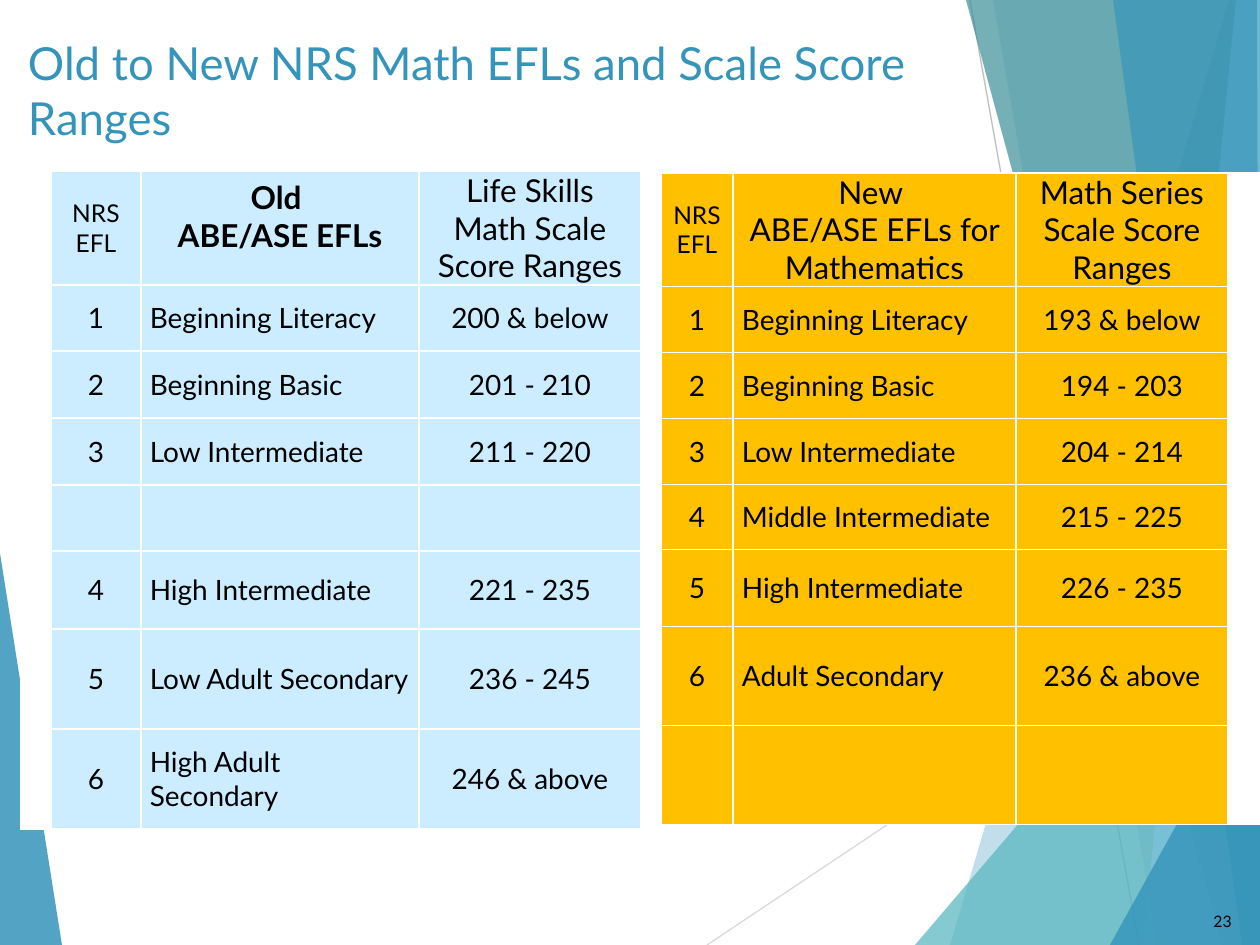
from dataclasses import dataclass

from lxml.etree import SubElement
from pptx import Presentation
from pptx.dml.color import RGBColor
from pptx.enum.shapes import MSO_CONNECTOR
from pptx.enum.text import MSO_ANCHOR as Anchor, PP_ALIGN as Align
from pptx.oxml.ns import qn
from pptx.util import Emu, Pt


@dataclass(frozen=True)
class Theme:
    font: str = "Lato"
    blue: str = "3494BA"
    teal: str = "58B6C0"
    dark_teal: str = "3A8F98"
    pale_blue: str = "7FC1DB"
    light_grey: str = "D9D9D9"
    grey: str = "BFBFBF"
    black: str = "000000"
    white: str = "FFFFFF"
    old_fill: str = "CCECFF"
    new_fill: str = "FFC000"
    title_size: int = 26
    header_size: int = 18
    body_size: int = 16
    label_size: int = 14
    number_size: int = 9


THEME = Theme()
SCALE = 914400 / 126  # EMU in one px
WIDTH, HEIGHT = 1260, 945
CELL_INSET = 9

TITLE = "Old to New NRS Math EFLs and Scale Score Ranges"
SLIDE_NUMBER = "23"

# Background: lines as (start, end, colour), facets as (points, colour, opacity %)
LINES = [
    ((707, 945), (1260, 576), THEME.light_grey),
    ((970, 0), (1139, 945), THEME.grey),
]
FACETS = [
    ([(0, 553), (62, 945), (0, 945)], THEME.blue, 85),
    ([(1229, 0), (950, 945), (1260, 945), (1260, 0)], THEME.blue, 30),
    ([(993, 0), (1158, 945), (1260, 945), (1260, 0)], THEME.blue, 20),
    ([(915, 945), (1260, 541), (1260, 945)], THEME.teal, 72),
    ([(966, 0), (1222, 945), (1260, 945), (1260, 0)], THEME.dark_teal, 70),
    ([(1236, 0), (1143, 945), (1260, 945), (1260, 0)], THEME.pale_blue, 70),
    ([(1113, 0), (1242, 945), (1260, 945), (1257, 0)], THEME.blue, 65),
    ([(1110, 945), (1260, 674), (1260, 945)], THEME.blue, 80),
]

OLD_LEVELS = [
    ("NRS EFL", "Old \nABE/ASE EFLs", "Life Skills Math Scale Score Ranges"),
    ("1", "Beginning Literacy", "200 & below"),
    ("2", "Beginning Basic", "201 - 210"),
    ("3", "Low Intermediate", "211 - 220"),
    ("", "", ""),
    ("4", "High Intermediate", "221 - 235"),
    ("5", "Low Adult Secondary", "236 - 245"),
    ("6", "High Adult Secondary", "246 & above"),
]
NEW_LEVELS = [
    ("NRS EFL", "New \nABE/ASE EFLs for Mathematics", "Math Series Scale Score Ranges"),
    ("1", "Beginning Literacy", "193 & below"),
    ("2", "Beginning Basic", "194 - 203"),
    ("3", "Low Intermediate", "204 - 214"),
    ("4", "Middle Intermediate", "215 - 225"),
    ("5", "High Intermediate", "226 - 235"),
    ("6", "Adult Secondary", "236 & above"),
    ("", "", ""),
]
# "spacer" is the index of the blank white column on the outer side
TABLES = [
    dict(levels=OLD_LEVELS, left=21, top=171, spacer=0, fill=THEME.old_fill,
         columns=[30, 90, 278, 222], rows=[114, 66, 67, 67, 66, 78, 100, 100]),
    dict(levels=NEW_LEVELS, left=661, top=173, spacer=3, fill=THEME.new_fill,
         columns=[72, 283, 212, 32], rows=[113, 66, 66, 66, 65, 77, 99, 99]),
]


def px(value):
    return Emu(round(value * SCALE))


def rgb(colour):
    return RGBColor.from_string(colour)


def write(paragraph, text, size, colour=THEME.black, bold=False):
    for index, line in enumerate(text.split("\n")):
        if index:
            paragraph.add_line_break()
        run = paragraph.add_run()
        run.text = line
        run.font.name = THEME.font
        run.font.size = Pt(size)
        run.font.bold = bold
        run.font.color.rgb = rgb(colour)


def add_line(slide, start, end, colour):
    line = slide.shapes.add_connector(
        MSO_CONNECTOR.STRAIGHT, *(px(value) for value in (*start, *end)))
    line.line.color.rgb = rgb(colour)
    line.line.width = Pt(0.75)
    SubElement(line._element.spPr, qn("a:effectLst"))


def add_facet(slide, points, colour, opacity):
    builder = slide.shapes.build_freeform(*points[0], scale=SCALE)
    builder.add_line_segments(points[1:], close=True)
    shape = builder.convert_to_shape()
    shape.shadow.inherit = False
    shape.line.fill.background()
    shape.fill.solid()
    shape.fill.fore_color.rgb = rgb(colour)
    color_element = shape._element.spPr.find(f"{qn('a:solidFill')}/{qn('a:srgbClr')}")
    SubElement(color_element, qn("a:alpha"), val=str(opacity * 1000))


def format_cell(cell, fill):
    """Draw white borders, fill the cell and set its insets."""
    properties = cell._tc.get_or_add_tcPr()
    for side in ("lnL", "lnR", "lnT", "lnB"):
        border = SubElement(properties, qn(f"a:{side}"), w=str(Pt(1)))
        solid = SubElement(border, qn("a:solidFill"))
        SubElement(solid, qn("a:srgbClr"), val=THEME.white)
    cell.fill.solid()
    cell.fill.fore_color.rgb = rgb(fill)
    cell.vertical_anchor = Anchor.MIDDLE
    cell.margin_left = cell.margin_right = px(CELL_INSET)
    cell.margin_top = cell.margin_bottom = 0


def add_levels_table(slide, levels, left, top, spacer, fill, columns, rows):
    table = slide.shapes.add_table(
        len(rows), len(columns), px(left), px(top),
        px(sum(columns)), px(sum(rows))).table
    table.first_row = table.horz_banding = False
    for column, width in zip(table.columns, columns):
        column.width = px(width)
    for row, height in zip(table.rows, rows):
        row.height = px(height)

    first = 1 if spacer == 0 else 0
    for r, texts in enumerate(levels):
        for c in range(len(columns)):
            format_cell(table.cell(r, c), THEME.white if c == spacer else fill)
        for c, text in enumerate(texts):
            if not text:
                continue
            header = r == 0
            size = THEME.body_size
            if header:
                size = THEME.label_size if c == 0 else THEME.header_size
            cell = table.cell(r, first + c)
            paragraph = cell.text_frame.paragraphs[0]
            paragraph.alignment = Align.LEFT if c == 1 and not header else Align.CENTER
            write(paragraph, text, size, bold=text.startswith("Old"))
    return table


def add_title(slide):
    title = slide.shapes.title
    title.left, title.top, title.width, title.height = px(0), px(29), px(1008), px(82)
    slide.shapes._spTree.append(title._element)  # in front of the background
    frame = title.text_frame
    frame.word_wrap = True
    frame.vertical_anchor = Anchor.TOP
    frame.margin_left = px(28)
    frame.paragraphs[0].alignment = Align.LEFT
    write(frame.paragraphs[0], TITLE, THEME.title_size, THEME.blue)


def add_slide_number(slide):
    frame = slide.shapes.add_textbox(px(1173), px(896), px(71), px(50)).text_frame
    frame.word_wrap = True
    frame.vertical_anchor = Anchor.MIDDLE
    frame.paragraphs[0].alignment = Align.RIGHT
    write(frame.paragraphs[0], SLIDE_NUMBER, THEME.number_size)


def main():
    presentation = Presentation()
    presentation.slide_width, presentation.slide_height = px(WIDTH), px(HEIGHT)
    slide = presentation.slides.add_slide(presentation.slide_layouts[5])
    add_facet(slide, *FACETS[0])
    for line in LINES:
        add_line(slide, *line)
    for facet in FACETS[1:]:
        add_facet(slide, *facet)
    add_slide_number(slide)
    add_title(slide)
    old_table, _ = [add_levels_table(slide, **table) for table in TABLES]
    old_table.cell(0, 2).margin_bottom = px(23)  # lifts the bold heading
    presentation.save("out.pptx")


if __name__ == "__main__":
    main()
